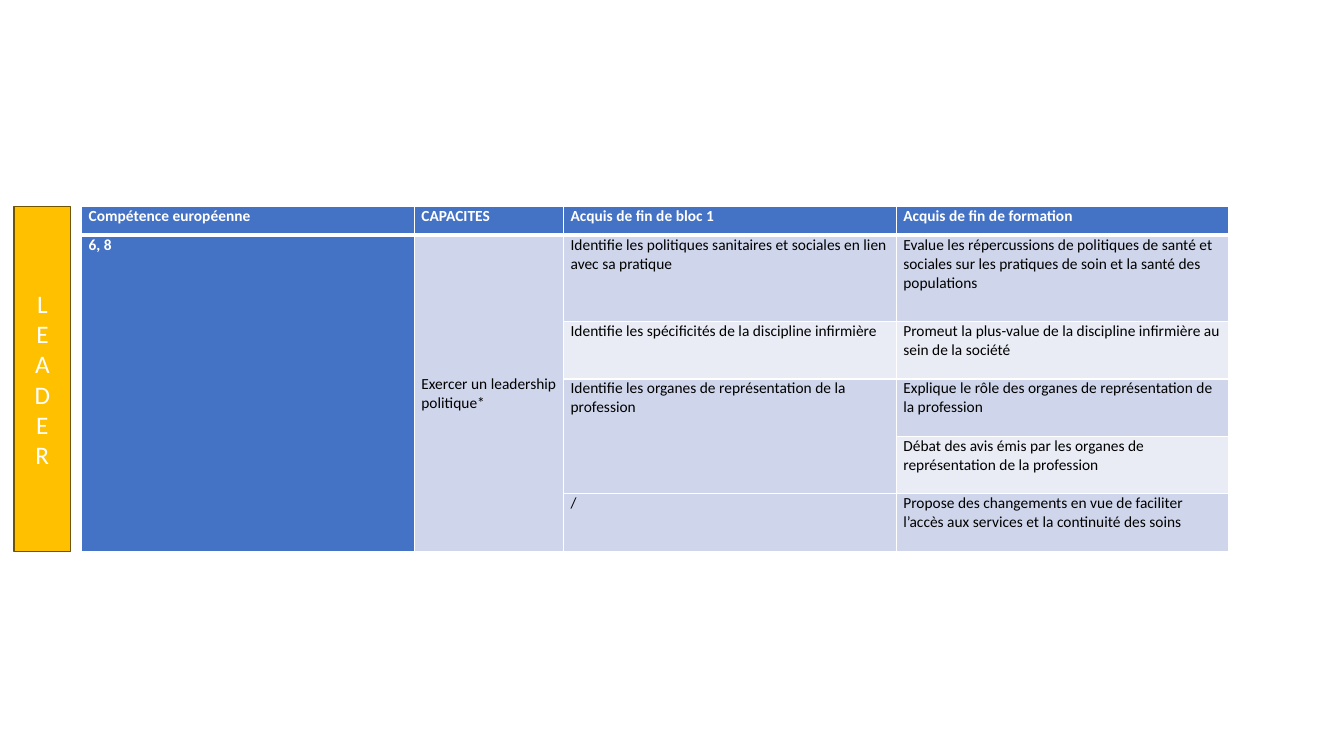
from lxml.etree import SubElement
from pptx import Presentation
from pptx.dml.color import RGBColor
from pptx.enum.shapes import MSO_SHAPE
from pptx.enum.text import MSO_ANCHOR, PP_ALIGN
from pptx.oxml.ns import qn
from pptx.util import Inches, Pt

BLUE, BAND_DARK, BAND_LIGHT = "4472C4", "CFD5EA", "E9EBF5"
GOLD, BROWN, WHITE, BLACK = "FFC000", "705400", "FFFFFF", "000000"

# Grid: the table rows are multiples of one unit
TOP, UNIT = 2.05, 0.285
ROW_UNITS = [1, 3, 2, 2, 2, 2]
COL_WIDTHS = [3.3, 1.48, 3.3, 3.3]
HEIGHT = UNIT * sum(ROW_UNITS)

# None marks a cell covered by the one above it
ROWS = [
    ["Compétence européenne", "CAPACITES", "Acquis de fin de bloc 1",
     "Acquis de fin de formation"],
    ["6, 8", "Exercer un leadership politique*",
     "Identifie les politiques sanitaires et sociales en lien avec sa pratique",
     "Evalue les répercussions de politiques de santé et sociales sur les "
     "pratiques de soin et la santé des populations"],
    [None, None, "Identifie les spécificités de la discipline infirmière",
     "Promeut la plus-value de la discipline infirmière au sein de la société"],
    [None, None, "Identifie les organes de représentation de la profession",
     "Explique le rôle des organes de représentation de la profession"],
    [None, None, None,
     "Débat des avis émis par les organes de représentation de la profession"],
    [None, None, "/",
     "Propose des changements en vue de faciliter l’accès aux services et la "
     "continuité des soins"],
]
MERGES = [(1, 0, 5, 0), (1, 1, 5, 1), (3, 2, 4, 2)]


def rgb(value):
    return RGBColor.from_string(value)


def write(tf, text, color, **font):
    r = tf.paragraphs[0].add_run()
    r.text = text
    r.font.color.rgb = rgb(color)
    for name, value in {"name": "Calibri", **font}.items():
        setattr(r.font, name, value)


def add_borders(cell, widths):
    """Draw white cell edges; widths are points by side."""
    tcPr = cell._tc.get_or_add_tcPr()
    for i, (side, width) in enumerate(widths.items()):
        ln = SubElement(tcPr, qn(f"a:ln{side}"), w=str(Pt(width)))
        SubElement(SubElement(ln, qn("a:solidFill")), qn("a:srgbClr"), val=WHITE)
        tcPr.insert(i, ln)


def format_cell(cell, row, col):
    heading = row == 0 or col == 0
    layout = {
        "margin_left": Inches(0.07), "margin_right": Inches(0.07),
        "margin_top": 0, "margin_bottom": 0,
        "vertical_anchor": MSO_ANCHOR.MIDDLE if row and col == 1 else MSO_ANCHOR.TOP,
    }
    for name, value in layout.items():
        setattr(cell, name, value)
    cell.fill.solid()
    cell.fill.fore_color.rgb = rgb(
        BLUE if heading else BAND_DARK if row % 2 else BAND_LIGHT)
    add_borders(cell, {"L": 1, "R": 1, "T": 3 if row == 1 else 1,
                       "B": 3 if row == 0 else 1})
    if ROWS[row][col] is not None:
        write(cell.text_frame, ROWS[row][col], WHITE if heading else BLACK,
              size=Pt(11), bold=heading)


def add_skills_table(slide, left):
    table = slide.shapes.add_table(
        len(ROWS), len(COL_WIDTHS), Inches(left), Inches(TOP),
        Inches(sum(COL_WIDTHS)), Inches(HEIGHT)).table
    for column, width in zip(table.columns, COL_WIDTHS):
        column.width = Inches(width)
    for row, units in zip(table.rows, ROW_UNITS):
        row.height = Inches(units * UNIT)
    for top, left_col, bottom, right_col in MERGES:
        table.cell(top, left_col).merge(table.cell(bottom, right_col))
    for row in range(len(ROWS)):
        for col in range(len(COL_WIDTHS)):
            format_cell(table.cell(row, col), row, col)


def add_role_banner(slide, text, left, width):
    s = slide.shapes.add_shape(MSO_SHAPE.RECTANGLE, Inches(left), Inches(TOP),
                               Inches(width), Inches(HEIGHT))
    s.shadow.inherit = False
    s.fill.solid()
    s.fill.fore_color.rgb = rgb(GOLD)
    s.line.color.rgb = rgb(BROWN)
    s.line.width = Pt(1)
    tf = s.text_frame
    tf.vertical_anchor = MSO_ANCHOR.MIDDLE
    tf.paragraphs[0].alignment = PP_ALIGN.CENTER
    write(tf, text, WHITE, size=Pt(18))
    # Upright letters stacked downwards
    s.element.txBody.find(qn("a:bodyPr")).set("vert", "wordArtVert")


def main():
    prs = Presentation()
    prs.slide_width, prs.slide_height = Inches(13.33), Inches(7.5)
    slide = prs.slides.add_slide(prs.slide_layouts[6])
    add_skills_table(slide, left=0.81)
    add_role_banner(slide, "LEADER", left=0.14, width=0.56)
    prs.save("out.pptx")


if __name__ == "__main__":
    main()
